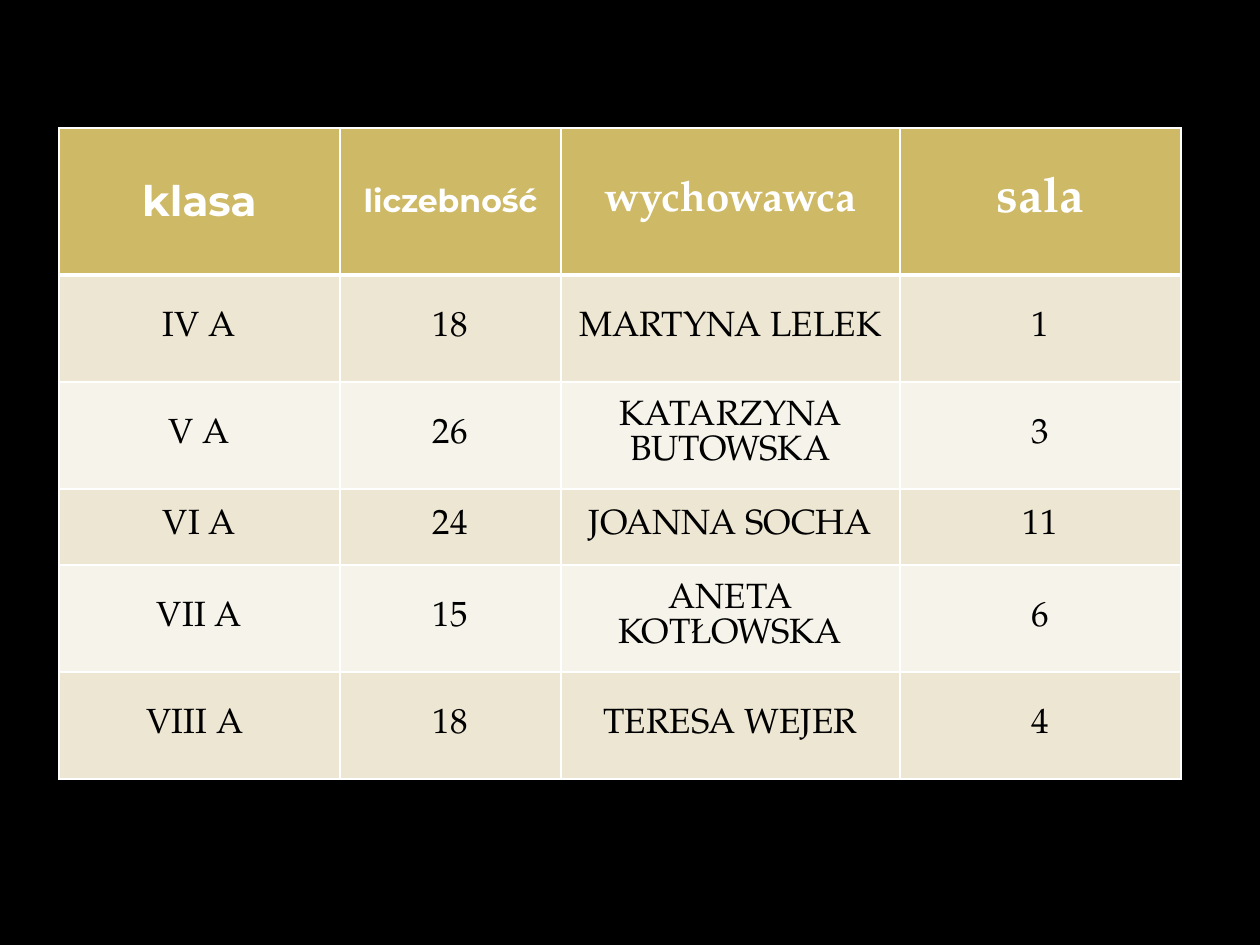
from lxml.etree import SubElement
from pptx import Presentation
from pptx.dml.color import RGBColor
from pptx.enum.text import MSO_ANCHOR, PP_ALIGN
from pptx.oxml.ns import qn
from pptx.util import Pt

PX = 914400 / 126
BLACK = RGBColor(0x00, 0x00, 0x00)
WHITE = RGBColor(0xFF, 0xFF, 0xFF)
GOLD = RGBColor(0xCE, 0xB9, 0x66)
SAND = RGBColor(0xED, 0xE6, 0xD3)
IVORY = RGBColor(0xF6, 0xF3, 0xEA)
SANS = "Montserrat"
SERIF = "TeX Gyre Pagella"

HEADERS = [
    ("klasa", SANS, 24),
    ("liczebność", SANS, 18),
    ("wychowawca", SERIF, 24),
    ("sala", SERIF, 28),
]
CLASSES = [
    ("IV A", "18", "MARTYNA LELEK", "1"),
    ("V A", "26", "KATARZYNA BUTOWSKA", "3"),
    ("VI A", "24", "JOANNA SOCHA", "11"),
    ("VII A", "15", "ANETA KOTŁOWSKA", "6"),
    ("VIII A ", "18", "TERESA WEJER", "4"),
]
BODY_SIZE = 20
LEFT, TOP = 59, 128
COLUMN_WIDTHS = [281, 221, 339, 281]
ROW_HEIGHTS = [147, 107, 107, 76, 107, 107]


def px(length):
    return round(length * PX)


def set_borders(cell, top=1, bottom=1):
    """Draw white borders; top and bottom are widths in points."""
    properties = cell._tc.get_or_add_tcPr()
    for side, width in (("L", 1), ("R", 1), ("T", top), ("B", bottom)):
        line = SubElement(properties, qn(f"a:ln{side}"), w=str(Pt(width)))
        fill = SubElement(line, qn("a:solidFill"))
        SubElement(fill, qn("a:srgbClr"), val=str(WHITE))


def fill_cell(cell, text, font_name, size, color, background, bold=False):
    cell.fill.solid()
    cell.fill.fore_color.rgb = background
    cell.vertical_anchor = MSO_ANCHOR.MIDDLE
    paragraph = cell.text_frame.paragraphs[0]
    paragraph.text = text
    paragraph.alignment = PP_ALIGN.CENTER
    font = paragraph.runs[0].font
    font.name, font.size, font.bold = font_name, Pt(size), bold
    font.color.rgb = color


def main():
    presentation = Presentation()
    presentation.slide_width, presentation.slide_height = px(1260), px(945)
    slide = presentation.slides.add_slide(presentation.slide_layouts[6])
    slide.background.fill.solid()
    slide.background.fill.fore_color.rgb = BLACK

    table = slide.shapes.add_table(
        len(ROW_HEIGHTS), len(COLUMN_WIDTHS), px(LEFT), px(TOP),
        px(sum(COLUMN_WIDTHS)), px(sum(ROW_HEIGHTS))).table
    for column, width in zip(table.columns, COLUMN_WIDTHS):
        column.width = px(width)
    for row, height in zip(table.rows, ROW_HEIGHTS):
        row.height = px(height)

    for column, (text, font_name, size) in enumerate(HEADERS):
        cell = table.cell(0, column)
        set_borders(cell, bottom=3)
        fill_cell(cell, text, font_name, size, WHITE, GOLD, bold=True)
    for row, values in enumerate(CLASSES, start=1):
        for column, text in enumerate(values):
            cell = table.cell(row, column)
            set_borders(cell, top=3 if row == 1 else 1)
            fill_cell(cell, text, SERIF, BODY_SIZE, BLACK,
                      SAND if row % 2 else IVORY)

    presentation.save("out.pptx")


if __name__ == "__main__":
    main()
